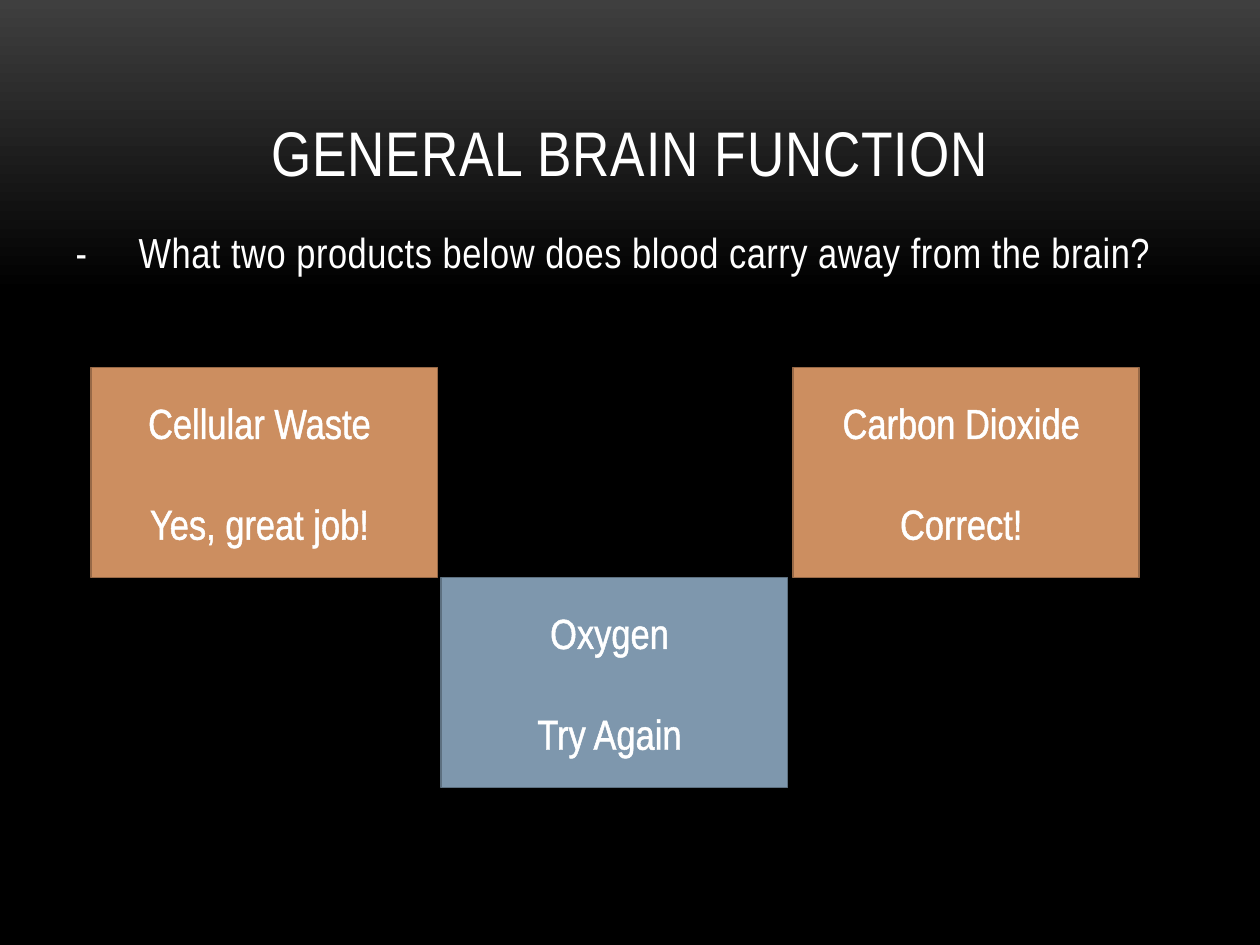
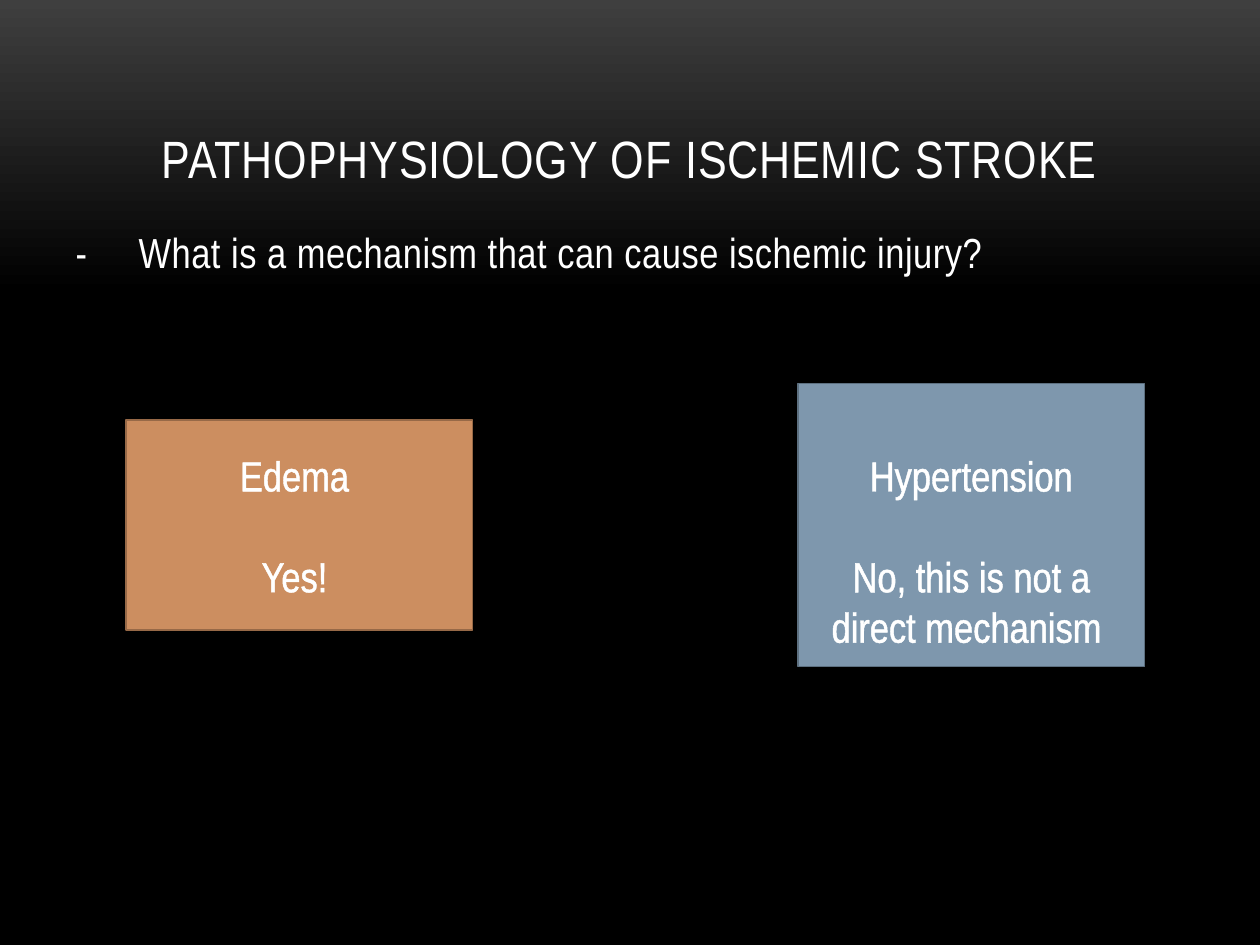
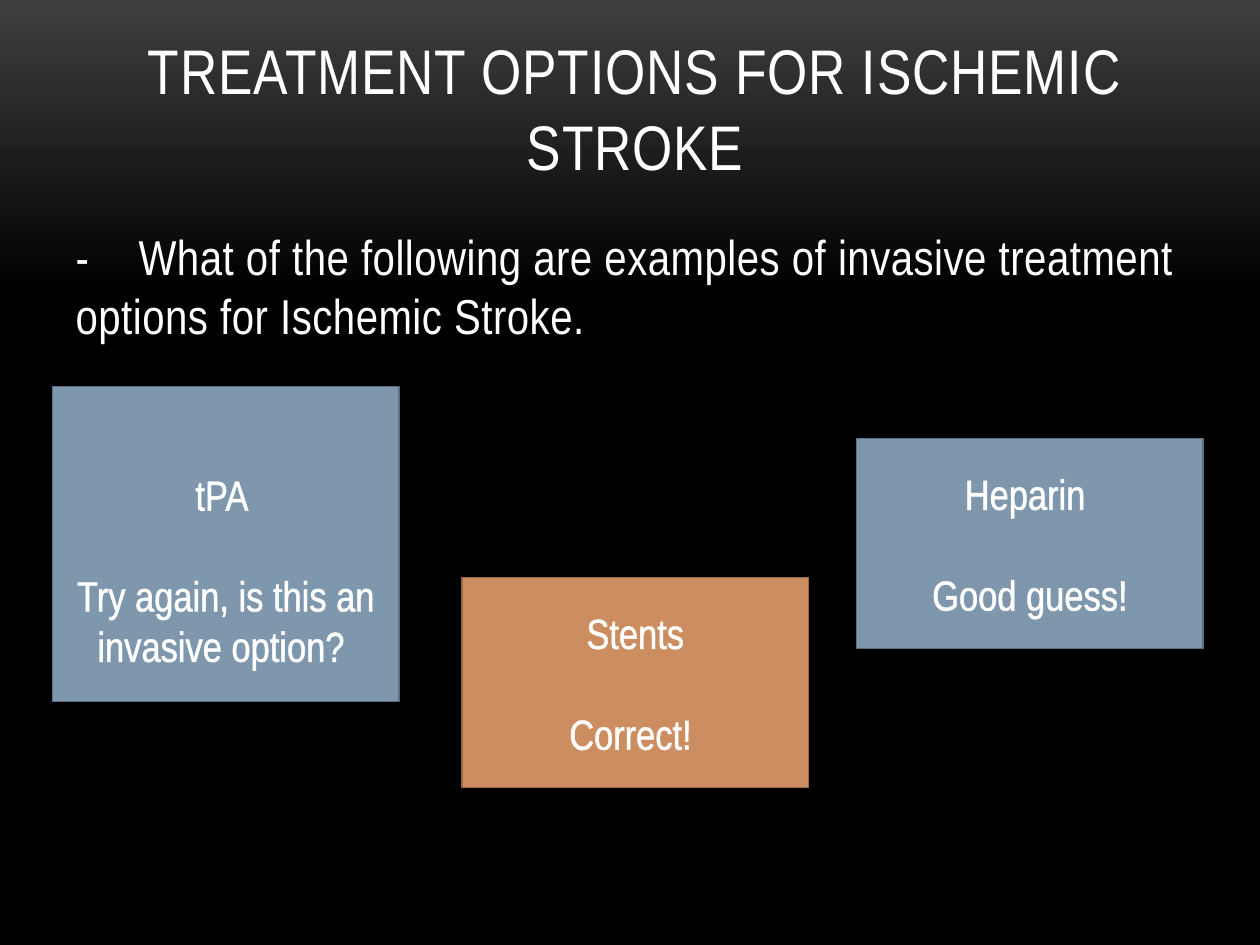
from dataclasses import dataclass

from lxml.etree import SubElement
from pptx import Presentation
from pptx.dml.color import RGBColor as Color
from pptx.enum.shapes import MSO_SHAPE as Shape
from pptx.enum.text import MSO_ANCHOR as Anchor, MSO_AUTO_SIZE as AutoSize, PP_ALIGN as Align
from pptx.oxml.ns import qn
from pptx.util import Pt


@dataclass(frozen=True)
class Theme:
    """Colours and type sizes that all the quiz slides share."""

    font: str = "Arial Narrow"
    text: Color = Color.from_string("FFFFFF")
    glow: Color = Color.from_string("3F3F3F")
    night: Color = Color.from_string("000000")
    right: tuple = (Color.from_string("CC8E60"), Color.from_string("976947"))
    wrong: tuple = (Color.from_string("7E97AD"), Color.from_string("5D7080"))
    title_size: float = 36
    small_title_size: float = 30
    question_size: float = 24
    large_question_size: float = 28
    answer_size: float = 24
    line_height: float = 1.2
    dash_width: float = 1.475
    border: float = 0.85
    outline: float = 1.45


THEME = Theme()
ANSWER_LINE = THEME.answer_size * THEME.line_height
ANSWER_WIDTH, ANSWER_HEIGHT = 198, 120


def paint_background(master):
    """Fade the master background from grey at the top to black."""
    fill = master.background.fill
    fill.gradient()
    fill.gradient_angle = 270
    for stop, color, position in zip(fill.gradient_stops, (THEME.glow, THEME.night), (0, 0.31)):
        stop.color.rgb = color
        stop.position = position


def place(shape, left, top, width, height):
    """Move and size a shape in points."""
    shape.left, shape.top, shape.width, shape.height = map(Pt, (left, top, width, height))


def style_runs(para, size, spacing=0):
    """Give the runs of a paragraph the theme font and letter spacing."""
    for span in para.runs:
        span.font.name = THEME.font
        span.font.size = Pt(size)
        span.font.color.rgb = THEME.text
        if spacing:
            span.font._element.set("spc", str(round(spacing * 100)))


def outline_runs(para):
    """Draw a thin line in the text colour around the letters."""
    for span in para.runs:
        props = span.font._element
        line = props.makeelement(qn("a:ln"), {"w": str(Pt(THEME.outline))})
        fill = SubElement(line, qn("a:solidFill"))
        SubElement(fill, qn("a:srgbClr"), val=str(THEME.text))
        props.insert(0, line)


def set_title(page, text, size=THEME.title_size, left=48, top=21.6):
    """Fill the title placeholder, centred on its bottom edge."""
    title = page.shapes.title
    place(title, left, top, 624, 90)
    frame = title.text_frame
    frame.text = text
    frame.auto_size = AutoSize.NONE
    frame.vertical_anchor = Anchor.BOTTOM
    para = frame.paragraphs[0]
    para.alignment = Align.CENTER
    style_runs(para, size, 0.5)


def set_question(page, text, size=THEME.question_size):
    """Fill the body placeholder with a question after a dash and a tab."""
    body = page.placeholders[1]
    place(body, 36, 126, 648, 222)
    frame = body.text_frame
    frame.text = f"-\t{text}"
    frame.auto_size = AutoSize.NONE
    para = frame.paragraphs[0]
    props = para._p.get_or_add_pPr()
    props.set("marL", "0")
    props.set("indent", "0")
    SubElement(props, qn("a:buNone"))
    tabs = SubElement(props, qn("a:tabLst"))
    SubElement(tabs, qn("a:tab"), pos=str(Pt(size * THEME.dash_width)), algn="l")
    para.space_before = Pt(0)
    style_runs(para, size, 0.3)


def add_answer(page, left, top, answer, verdict, colors, height=ANSWER_HEIGHT, lowered=False):
    """Add an answer box with its verdict, optionally one line lower."""
    box = page.shapes.add_shape(Shape.RECTANGLE, 0, 0, 0, 0)
    place(box, left, top, ANSWER_WIDTH, height)
    box.shadow.inherit = False
    box.fill.solid()
    box.fill.fore_color.rgb, box.line.color.rgb = colors
    box.line.width = Pt(THEME.border)
    frame = box.text_frame
    frame.word_wrap = True
    frame.vertical_anchor = Anchor.MIDDLE
    if lowered:
        frame.margin_top += Pt(ANSWER_LINE)
    frame.text = f"{answer}\n{verdict}"
    frame.paragraphs[1].space_before = Pt(ANSWER_LINE)
    for para in frame.paragraphs:
        para.alignment = Align.CENTER
        style_runs(para, THEME.answer_size)
        outline_runs(para)


def build_function(page):
    """Ask what blood carries away from the brain."""
    set_title(page, "GENERAL BRAIN FUNCTION")
    set_question(page, "What two products below does blood carry away from the brain?")
    add_answer(page, 252, 330, "Oxygen ", "Try Again ", THEME.wrong)
    add_answer(page, 52, 210, "Cellular Waste ", "Yes, great job! ", THEME.right)
    add_answer(page, 453, 210, "Carbon Dioxide ", "Correct! ", THEME.right)


def build_pathophysiology(page):
    """Ask for a mechanism of ischemic injury."""
    set_title(page, "PATHOPHYSIOLOGY OF ISCHEMIC STROKE", THEME.small_title_size)
    set_question(page, "What is a mechanism that can cause ischemic injury?")
    add_answer(page, 72, 240, "Edema ", "Yes! ", THEME.right)
    add_answer(page, 456, 219, "Hypertension", "No, this is not a direct mechanism ",
               THEME.wrong, height=162, lowered=True)


def build_treatment(page):
    """Ask for invasive treatment options."""
    set_title(page, "TREATMENT OPTIONS FOR ISCHEMIC STROKE", left=51, top=18)
    set_question(page, "What of the following are examples of invasive treatment options "
                 "for Ischemic Stroke.", THEME.large_question_size)
    add_answer(page, 264, 330, "Stents", "Correct! ", THEME.right)
    add_answer(page, 30, 221, "tPA ", "Try again, is this an invasive option? ",
               THEME.wrong, height=180, lowered=True)
    add_answer(page, 489.5, 250.5, "Heparin ", "Good guess!", THEME.wrong)


def main():
    """Build the quiz deck and save it."""
    deck = Presentation()
    deck.slide_width, deck.slide_height = Pt(720), Pt(540)
    paint_background(deck.slide_master)
    for build in (build_function, build_pathophysiology, build_treatment):
        build(deck.slides.add_slide(deck.slide_layouts[1]))
    deck.save("out.pptx")


if __name__ == "__main__":
    main()
